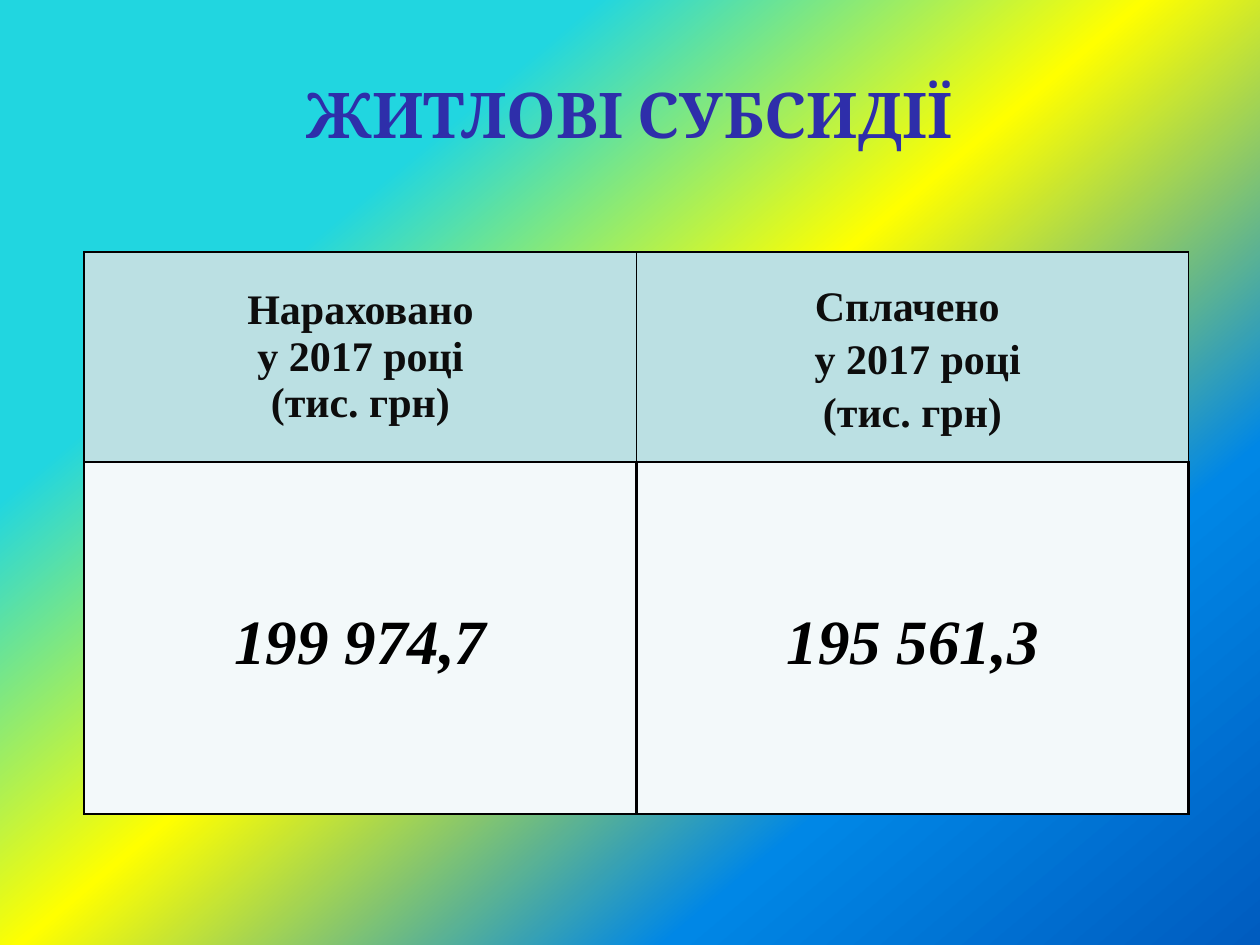
from lxml.etree import SubElement
from pptx import Presentation
from pptx.dml.color import RGBColor
from pptx.enum.text import MSO_ANCHOR, PP_ALIGN
from pptx.oxml.ns import qn
from pptx.util import Cm, Pt

COLORS = {
    "title": "2E2EAA", "header_text": "0D0D0D", "value_text": "000000",
    "header_fill": "BBE0E3", "value_fill": "F3F9FA", "border": "000000",
}
BACKGROUND_STOPS = [(25, "21D6E0"), (48, "FFFF00"), (75, "0087E6"), (100, "005CBF")]
BACKGROUND_ANGLE = 50  # clockwise

TITLE = "ЖИТЛОВІ СУБСИДІЇ"
HEADERS = [
    ["Нараховано", "у 2017 році", "(тис. грн)"],
    ["Сплачено ", " у 2017 році", "(тис. грн)"],
]
VALUES = [["199 974,7"], ["195 561,3"]]
ROW_HEIGHTS = [4.23, 7.1]
COLUMN_WIDTH = 11.13
THICK, THIN = 1.5, 1
# Border widths: left, right, top, bottom
HEADER_BORDERS = [(THICK, THIN, THICK, THICK), (THIN, THIN, THIN, THICK)]
VALUE_BORDERS = [(THICK,) * 4] * 2


def color(name):
    return RGBColor.from_string(COLORS[name])


def paint_background(slide):
    fill = slide.background.fill
    fill.gradient()
    fill.gradient_angle = 360 - BACKGROUND_ANGLE
    stops = next(slide.element.iter(qn("a:gsLst")))
    for stop in list(stops):
        stops.remove(stop)
    for position, value in BACKGROUND_STOPS:
        stop = SubElement(stops, qn("a:gs"), pos=str(position * 1000))
        SubElement(stop, qn("a:srgbClr"), val=value)


def write_lines(frame, lines, size, font_name, color_name, italic=False, spacing=None):
    frame.word_wrap = True
    frame.text = "\n".join(lines)
    for paragraph in frame.paragraphs:
        paragraph.alignment = PP_ALIGN.CENTER
        if spacing:
            paragraph.line_spacing = spacing
        font = paragraph.font
        font.name, font.size = font_name, Pt(size)
        font.bold, font.italic = True, italic
        font.color.rgb = color(color_name)


def set_borders(cell, widths):
    properties = cell._tc.get_or_add_tcPr()
    for index, (side, width) in enumerate(zip("LRTB", widths)):
        line = SubElement(properties, qn(f"a:ln{side}"), w=str(Pt(width)))
        solid = SubElement(line, qn("a:solidFill"))
        SubElement(solid, qn("a:srgbClr"), val=COLORS["border"])
        properties.remove(line)
        properties.insert(index, line)  # borders must come before the fill


def add_title(slide):
    box = slide.shapes.add_textbox(Cm(1.27), Cm(0.76), Cm(22.86), Cm(3.05))
    box.text_frame.vertical_anchor = MSO_ANCHOR.MIDDLE
    write_lines(box.text_frame, [TITLE], 36, "Cambria", "title")


def add_subsidy_table(slide):
    table = slide.shapes.add_table(
        2, 2, Cm(1.7), Cm(5.08), Cm(2 * COLUMN_WIDTH), Cm(sum(ROW_HEIGHTS))
    ).table
    for column in table.columns:
        column.width = Cm(COLUMN_WIDTH)
    rows = [
        ("header", HEADERS, HEADER_BORDERS, 24, False),
        ("value", VALUES, VALUE_BORDERS, 36, True),
    ]
    for row, (kind, texts, borders, size, italic) in enumerate(rows):
        table.rows[row].height = Cm(ROW_HEIGHTS[row])
        for column, lines in enumerate(texts):
            cell = table.cell(row, column)
            cell.vertical_anchor = MSO_ANCHOR.MIDDLE
            cell.fill.solid()
            cell.fill.fore_color.rgb = color(f"{kind}_fill")
            spacing = None
            if (row, column) != (0, 0):
                spacing = 1.15
                cell.margin_left = cell.margin_right = Cm(0.18)
                cell.margin_top = cell.margin_bottom = 0
            write_lines(cell.text_frame, lines, size, "Times New Roman",
                        f"{kind}_text", italic, spacing)
            set_borders(cell, borders[column])


def main():
    presentation = Presentation()
    presentation.slide_width, presentation.slide_height = Cm(25.4), Cm(19.05)
    slide = presentation.slides.add_slide(presentation.slide_layouts[6])
    paint_background(slide)
    add_title(slide)
    add_subsidy_table(slide)
    presentation.save("out.pptx")


if __name__ == "__main__":
    main()
